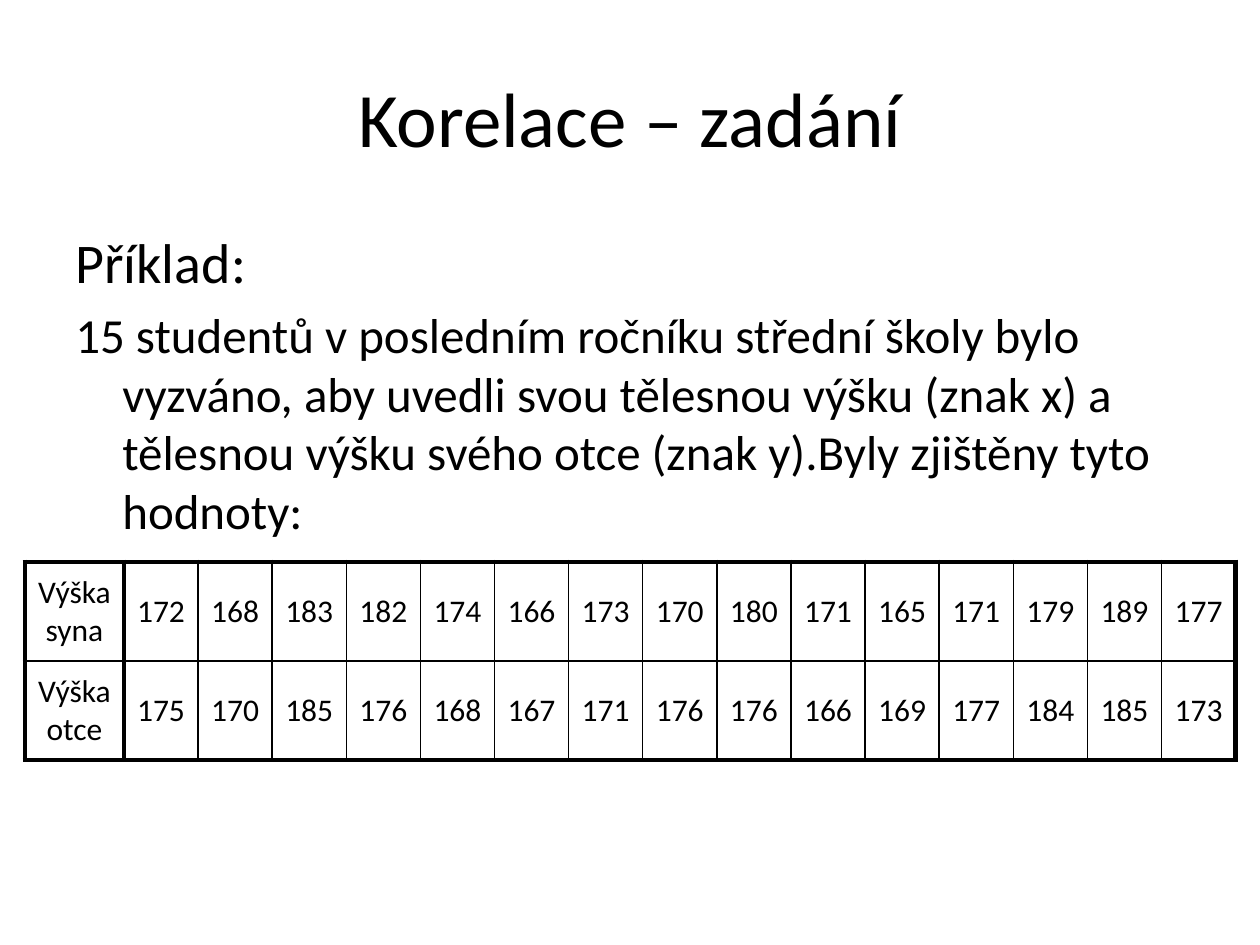
from lxml.etree import SubElement
from pptx import Presentation
from pptx.dml.color import RGBColor
from pptx.enum.text import MSO_ANCHOR, PP_ALIGN
from pptx.oxml.ns import qn
from pptx.util import Emu, Pt

FONT = "Calibri"
INK = "000000"
THICK, THIN = 3, 1
HEIGHTS = [
    ("Výška syna", [172, 168, 183, 182, 174, 166, 173, 170,
                    180, 171, 165, 171, 179, 189, 177]),
    ("Výška otce", [175, 170, 185, 176, 168, 167, 171, 176,
                    176, 166, 169, 177, 184, 185, 173]),
]
BODY = [
    ("Příklad:", 32),
    ("15 studentů v posledním ročníku střední školy bylo vyzváno, aby uvedli "
     "svou tělesnou výšku (znak x) a tělesnou výšku svého otce (znak y)."
     "Byly zjištěny tyto hodnoty:", 28),
]


def px(n):
    return Emu(round(n * 914400 / 126))


def color(value):
    return RGBColor.from_string(value)


def write(p, text, size, align):
    p.text = text
    p.alignment = align
    font = p.runs[0].font
    font.name, font.size = FONT, Pt(size)
    font.color.rgb = color(INK)


def add_frame(s, box, anchor):
    tf = s.shapes.add_textbox(*map(px, box)).text_frame
    tf.word_wrap = True
    tf.vertical_anchor = anchor
    return tf


def add_title(s, box, text):
    tf = add_frame(s, box, MSO_ANCHOR.MIDDLE)
    write(tf.paragraphs[0], text, 44, PP_ALIGN.CENTER)


def add_body(s, box, items, indent=47):
    tf = add_frame(s, box, MSO_ANCHOR.TOP)
    for i, (text, size) in enumerate(items):
        p = tf.add_paragraph() if i else tf.paragraphs[0]
        write(p, text, size, PP_ALIGN.LEFT)
        p.space_before = Pt(size * 0.2)
        pPr = p._p.get_or_add_pPr()
        pPr.set("marL", str(px(indent)))
        pPr.set("indent", str(-px(indent)))


def set_borders(cell, widths):
    tcPr = cell._tc.get_or_add_tcPr()
    for side, width in widths.items():
        ln = SubElement(tcPr, qn(f"a:ln{side}"), w=str(Pt(width)))
        fill = SubElement(ln, qn("a:solidFill"))
        SubElement(fill, qn("a:srgbClr"), val=INK)


def add_heights_table(s, box, rows, label_width=99):
    n_rows, n_cols = len(rows), len(rows[0][1]) + 1
    table = s.shapes.add_table(n_rows, n_cols, *map(px, box)).table
    table.first_row = table.horz_banding = False
    for c, column in enumerate(table.columns):
        column.width = px((box[2] - label_width) / (n_cols - 1) if c else label_width)
    for r, (label, values) in enumerate(rows):
        for c, value in enumerate([label, *values]):
            cell = table.cell(r, c)
            cell.vertical_anchor = MSO_ANCHOR.MIDDLE
            cell.margin_left = cell.margin_right = px(12)
            write(cell.text_frame.paragraphs[0], str(value), 18, PP_ALIGN.CENTER)
            set_borders(cell, {
                "L": THICK if c <= 1 else THIN,
                "R": THICK if c in (0, n_cols - 1) else THIN,
                "T": THICK if r == 0 else THIN,
                "B": THICK if r == n_rows - 1 else THIN,
            })
            cell.fill.background()


def main():
    prs = Presentation()
    prs.slide_width, prs.slide_height = px(1260), px(945)
    s = prs.slides.add_slide(prs.slide_layouts[6])
    add_title(s, (63, 38, 1134, 158), "Korelace – zadání")
    add_body(s, (63, 221, 1134, 624), BODY)
    add_heights_table(s, (25, 562, 1211, 198), HEIGHTS)
    prs.save("out.pptx")


if __name__ == "__main__":
    main()
